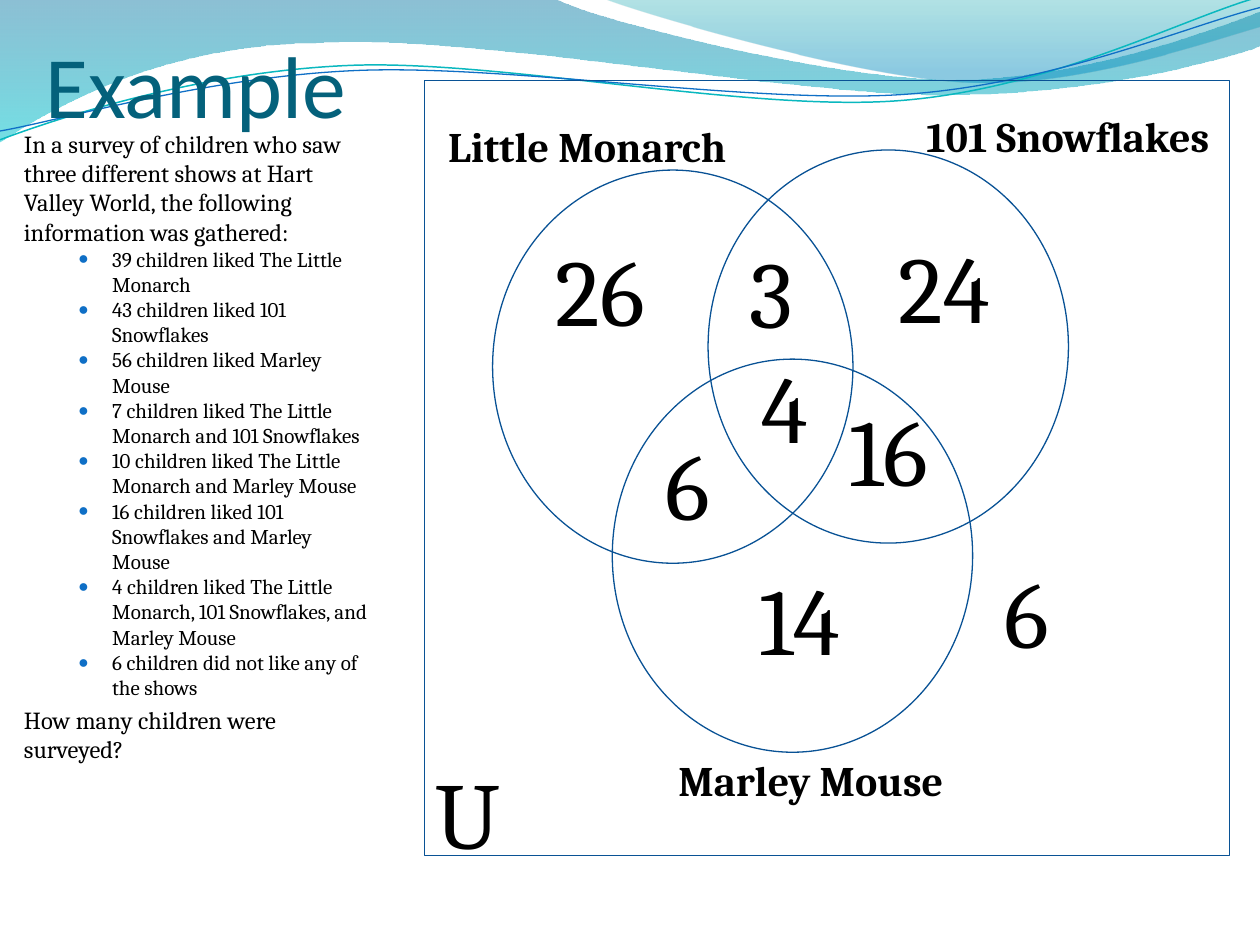
from collections import namedtuple

from lxml import etree
from pptx import Presentation
from pptx.dml.color import RGBColor
from pptx.enum.shapes import MSO_SHAPE as Shape
from pptx.enum.text import MSO_ANCHOR as Anchor, MSO_AUTO_SIZE as AutoSize, PP_ALIGN as Align
from pptx.oxml.ns import qn
from pptx.util import Inches, Pt

Box = namedtuple("Box", "left top width height")
BLACK, TEAL, BLUE, OUTLINE = "000000", "04617B", "0F6FC6", "095295"

# An outline is a start point, then lines (x, y) and cubic curves (two controls, end).
LEFT_RIBBON = [(0, -.01), (4.4, -.01),
               (4.76, .17, 6.64, .63, 7.58, .63), (8.53, .63, 9.58, .26, 10, .09),
               (10.01, .36), (9.83, .44, 8.7, .76, 7.46, .75),
               (6.22, .75, 3.82, .28, 2.57, .34), (1.29, .35, .46, .83, -.01, 1.13)]
RIGHT_RIBBON = [(4.79, -.01), (5.09, .11, 6.82, .62, 7.69, .65),
                (8.56, .69, 9.61, .32, 10, .21), (10, 0)]
TEAL_WAVE = [(0, 1.11), (.48, .93, 1.58, .57, 2.77, .52), (3.95, .47, 5.93, .89, 7.13, .8),
             (8.33, .71, 9.38, .15, 9.98, -.02)]
BLUE_WAVE = [(0, 1.04), (.47, .96, 1.64, .61, 2.83, .56), (4.03, .51, 5.97, .83, 7.17, .75),
             (8.36, .67, 9.41, .21, 10, .06)]

FACTS = [
    "39 children liked The Little Monarch",
    "43 children liked 101 Snowflakes",
    "56 children liked Marley Mouse",
    "7 children liked The Little Monarch and 101 Snowflakes",
    "10 children liked The Little Monarch and Marley Mouse",
    "16 children liked 101 Snowflakes and Marley Mouse",
    "4 children liked The Little Monarch, 101 Snowflakes, and Marley Mouse",
    "6 children did not like any of the shows",
]
# Text with its left and top inside the diagram.
SHOWS = [("Little Monarch", 0, .27, 2.58), ("101 Snowflakes", 3.81, .19, 2.59),
         ("Marley Mouse", 1.83, 5.3, 2.47)]
COUNTS = [("26", -.23, 1.15), ("24", 2.5, 1.13), ("14", 1.35, 3.76), ("3", 1.13, 1.17),
          ("6", .46, 2.69), ("16", 2.06, 2.42), ("4", 1.23, 2.08), ("6", 3.15, 3.71),
          ("U", -1.28, 5.3)]
CIRCLES = [(1.49, 2.21), (2.25, .55), (.54, .71)]


def color(value):
    return RGBColor.from_string(value)


def place(shape, box):
    shape.left, shape.top, shape.width, shape.height = map(Inches, box)


def write(para, text, size, font="Cambria", fill=BLACK, bold=False, align=Align.LEFT):
    para.alignment = align
    span = para.add_run()
    span.text = text
    span.font.name, span.font.size, span.font.bold = font, Pt(size), bold
    span.font.color.rgb = color(fill)


def add_outline(page, outline, close):
    """Draw an outline, joining each curve's three points into one cubic segment."""
    (left, top), *segments = outline
    points = [(Inches(x), Inches(y)) for part in segments
              for x, y in zip(part[::2], part[1::2])]
    builder = page.shapes.build_freeform(Inches(left), Inches(top))
    builder.add_line_segments(points, close=close)
    shape = builder.convert_to_shape()
    shape.shadow.inherit = False
    steps = iter(list(shape.element.iter(qn("a:lnTo"))))
    for part in segments:
        step = next(steps)
        if len(part) == 6:
            step.tag = qn("a:cubicBezTo")
            for _ in range(2):
                extra = next(steps)
                step.append(extra[0])
                extra.getparent().remove(extra)
    return shape


def add_ribbon(page, outline, stops):
    """Fill an outline downwards with (position, colour, opacity) stops."""
    shape = add_outline(page, outline, True)
    shape.line.fill.background()
    shape.fill.gradient()
    shape.fill.gradient_angle = 270
    for stop, (position, value, _) in zip(shape.fill.gradient_stops, stops):
        stop.position = position
        stop.color.rgb = color(value)
    found = shape.element.spPr.iter(qn("a:srgbClr"))
    for node, (_, _, opacity) in zip(found, stops):
        etree.SubElement(node, qn("a:alpha")).set("val", str(opacity * 1000))
    return shape


def add_wave(page, outline, value, width):
    shape = add_outline(page, outline, False)
    shape.fill.background()
    shape.line.color.rgb = color(value)
    shape.line.width = Pt(width)
    return shape


def add_header(page):
    """Draw the ribbons and waves and keep them on the layout, behind the text."""
    parts = [
        add_ribbon(page, LEFT_RIBBON, [(0, "0074A1", 45), (1, "00C6CF", 55)]),
        add_ribbon(page, RIGHT_RIBBON, [(0, "00A1A9", 30), (.8, "008BBF", 45)]),
        add_wave(page, TEAL_WAVE, "0AB8BF", .85),
        add_wave(page, BLUE_WAVE, BLUE, .75),
    ]
    layout_tree = page.slide_layout.placeholders[0].element.getparent()
    for part in parts:
        layout_tree.append(part.element)


def fill_title(title, box):
    place(title, box)
    frame = title.text_frame
    frame.auto_size, frame.vertical_anchor = AutoSize.NONE, Anchor.BOTTOM
    frame.margin_left = frame.margin_right = frame.margin_bottom = 0
    write(frame.paragraphs[0], "Example", 50, font="Calibri", fill=TEAL)


def set_bullet(para, left=0, hanging=0, mark=None):
    props = para._p.get_or_add_pPr()
    props.set("marL", str(Inches(left)))
    props.set("indent", str(-Inches(hanging)))
    if mark is None:
        etree.SubElement(props, qn("a:buNone"))
        return
    tint = etree.SubElement(props, qn("a:buClr"))
    etree.SubElement(tint, qn("a:srgbClr")).set("val", BLUE)
    etree.SubElement(props, qn("a:buSzPct")).set("val", "85000")
    etree.SubElement(props, qn("a:buChar")).set("char", mark)


def fill_survey(body, box):
    place(body, box)
    frame = body.text_frame
    frame.auto_size, frame.word_wrap = AutoSize.NONE, True
    intro = ("In a survey of children who saw three different shows at Hart Valley World, "
             "the following information was gathered:")
    lines = [intro, *FACTS, "How many children were surveyed?"]
    for index, text in enumerate(lines):
        para = frame.paragraphs[0] if index == 0 else frame.add_paragraph()
        is_fact = text in FACTS
        para.level = int(is_fact)
        para.space_before = Pt(0 if is_fact else 2.8)
        if is_fact:
            set_bullet(para, .7, .27, "●")
        else:
            set_bullet(para)
        write(para, text, 12 if is_fact else 14)


def add_label(page, box, text, size, wrap=True, bold=False):
    label = page.shapes.add_textbox(*map(Inches, box))
    frame = label.text_frame
    frame.word_wrap, frame.auto_size = wrap, AutoSize.SHAPE_TO_FIT_TEXT
    write(frame.paragraphs[0], text, size, bold=bold, align=Align.CENTER)


def add_line_shape(page, kind, box):
    shape = page.shapes.add_shape(kind, *map(Inches, box))
    shape.shadow.inherit = False
    shape.fill.background()
    shape.line.color.rgb = color(OUTLINE)
    shape.line.width = Pt(.75)


def add_venn(page, box):
    for x, y in CIRCLES:
        add_line_shape(page, Shape.OVAL, Box(box.left + x, box.top + y, 2.86, 3.12))
    for text, x, y, width in SHOWS:
        add_label(page, Box(box.left + x, box.top + y, width, .5), text, 24,
                  wrap=False, bold=True)
    for text, x, y in COUNTS:
        add_label(page, Box(box.left + x, box.top + y, 3.25, 1.01), text, 54)
    add_line_shape(page, Shape.RECTANGLE, box)


def main():
    deck = Presentation()
    deck.slide_width, deck.slide_height = Inches(10), Inches(7.5)
    page = deck.slides.add_slide(deck.slide_layouts[1])
    title, body = page.placeholders
    add_header(page)
    fill_title(title, Box(.36, -.17, 9, 1.25))
    fill_survey(body, Box(.09, .97, 2.94, 3.88))
    add_venn(page, Box(3.37, .64, 6.39, 6.15))
    deck.save("out.pptx")


if __name__ == "__main__":
    main()
